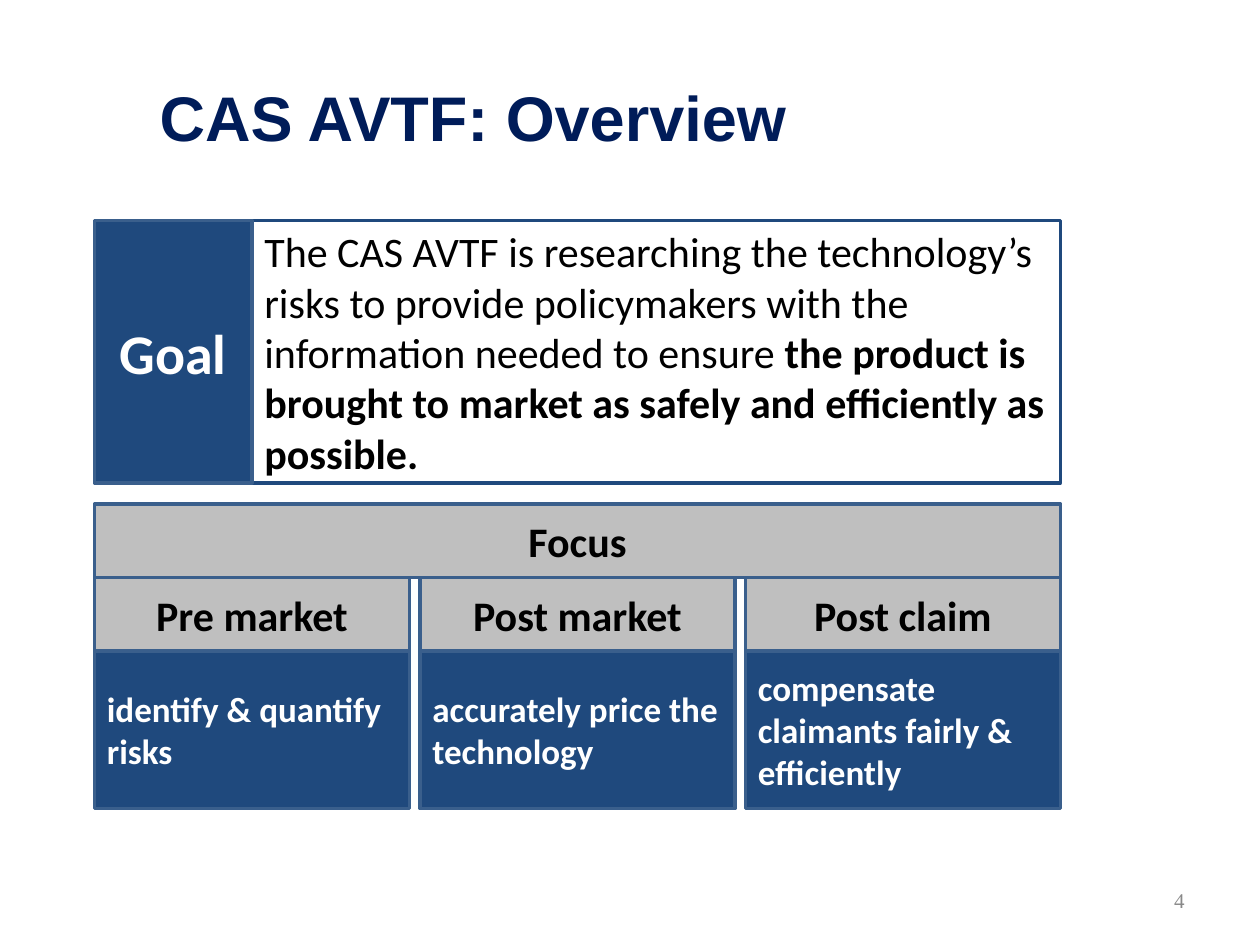
from pptx import Presentation, util as u
from pptx.dml.color import RGBColor
from pptx.enum import shapes, text

PX = 9525
NAVY = RGBColor(0x00, 0x1C, 0x59)
BLUE = RGBColor(0x1F, 0x49, 0x7D)
EDGE = RGBColor(0x3A, 0x5F, 0x8C)
SILVER = RGBColor(0xBF, 0xBF, 0xBF)
GREY = RGBColor(0x89, 0x89, 0x89)
BLACK = RGBColor(0, 0, 0)
WHITE = RGBColor(255, 255, 255)
LEFT, CENTER, RIGHT = text.PP_ALIGN.LEFT, text.PP_ALIGN.CENTER, text.PP_ALIGN.RIGHT


def write(shape, runs, size, color, align, name="Calibri"):
    frame = shape.text_frame
    frame.word_wrap = True
    frame.vertical_anchor = text.MSO_ANCHOR.MIDDLE
    paragraph = frame.paragraphs[0]
    paragraph.alignment = align
    for words, bold in runs:
        run = paragraph.add_run()
        run.text = words
        run.font.color.rgb = color
        formats = {"name": name, "size": u.Pt(size), "bold": bold}
        for key, value in formats.items():
            setattr(run.font, key, value)


def add_box(place, fill, line, runs, size, color, align=CENTER):
    shape = slide.shapes.add_shape(
        shapes.MSO_SHAPE.RECTANGLE, *(value * PX for value in place))
    shape.shadow.inherit = False
    shape.fill.solid()
    shape.fill.fore_color.rgb = fill
    shape.line.color.rgb = line
    shape.line.width = u.Pt(2)
    write(shape, runs, size, color, align)


presentation = Presentation()
presentation.slide_width = 960 * PX
presentation.slide_height = 720 * PX
slide = presentation.slides.add_slide(presentation.slide_layouts[5])

title = slide.shapes.title
title_place = {"left": 112, "top": 29, "width": 848, "height": 120}
for key, value in title_place.items():
    setattr(title, key, value * PX)
write(title, [("CAS AVTF: Overview", True)], 36, NAVY, LEFT, "Arial")

number = slide.shapes.add_textbox(688 * PX, 667 * PX, 224 * PX, 38 * PX)
write(number, [("4", False)], 12, GREY, RIGHT, "Times New Roman")

margin, column_width, gap = 72, 240, 8
columns = [
    ("Pre market", "identify & quantify risks"),
    ("Post market", "accurately price the technology"),
    ("Post claim", "compensate claimants fairly & efficiently"),
]
for index, (stage, task) in enumerate(columns):
    left = margin + index * (column_width + gap)
    add_box((left, 440, column_width, 56), SILVER, EDGE, [(stage, True)], 24, BLACK)
    add_box((left, 496, column_width, 120), BLUE, EDGE, [(task, True)], 20, WHITE, LEFT)

add_box((margin, 384, 736, 56), SILVER, EDGE, [("Focus", True)], 24, BLACK)

goal = [
    ("The CAS AVTF is researching the technology’s risks to provide policymakers "
     "with the information needed to ensure ", False),
    ("the product is brought to market as safely and efficiently as possible.", True),
]
add_box((192, 168, 616, 200), WHITE, BLUE, goal, 24, BLACK, LEFT)
add_box((margin, 168, 120, 200), BLUE, EDGE, [("Goal", True)], 32, WHITE)

presentation.save("out.pptx")
